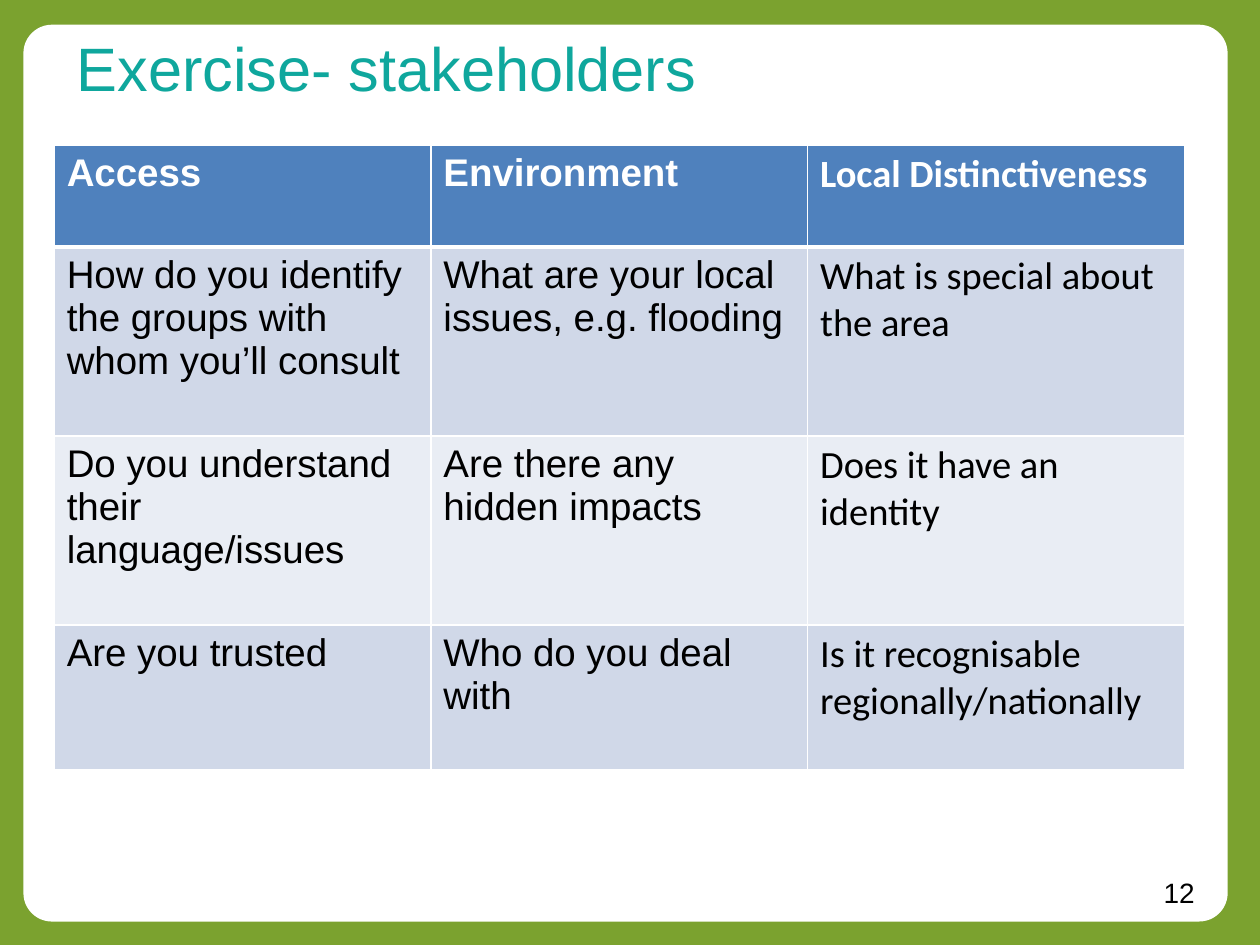
"""Build the stakeholder exercise slide: a framed panel, a title and a question table."""
from lxml import etree
from pptx import Presentation, util as u
from pptx.dml.color import RGBColor
from pptx.enum import shapes, text
from pptx.oxml.ns import qn

TITLE = "Exercise- stakeholders"
NUMBER = "12"
ROWS = [
    ("Access", "Environment", "Local Distinctiveness"),
    ("How do you identify the groups with whom you’ll consult",
     "What are your local issues, e.g. flooding", "What is special about the area"),
    ("Do you understand their language/issues",
     "Are there any hidden impacts", "Does it have an identity"),
    ("Are you trusted", "Who do you deal with", "Is it recognisable regionally/nationally"),
]
COLORS = {"frame": "7BA22F", "white": "FFFFFF", "title": "0FA79D", "black": "000000",
          "head": "4F81BD", "odd": "D0D8E8", "even": "E9EDF4"}
COLUMN_FONTS = ("Arial", "Arial", "Calibri")
ROW_HEIGHTS = (0.81, 1.5, 1.5, 1.15)
COLUMN_WIDTH = 2.99
PANEL = (0.2, 0.21, 9.53, 7.09)
TITLE_BOX = (0.51, 0.13, 6.8, 1.01)
NUMBER_BOX = (7.3, 6.9, 2.28, 0.37)
TABLE_CORNER = (0.43, 1.15)


def rgb(name):
    return RGBColor.from_string(COLORS[name])


def inches(values):
    return [u.Inches(v) for v in values]


def write(tf, content, color, **formats):
    p = tf.paragraphs[0]
    r = p.add_run()
    r.text = content
    r.font.color.rgb = rgb(color)
    for key, value in formats.items():
        setattr(r.font, key, value)
    return p


def add_text(s, box, content, color, size, margin_top, anchor, align):
    tf = s.shapes.add_textbox(*inches(box)).text_frame
    formats = {"word_wrap": True, "margin_top": u.Inches(margin_top), "vertical_anchor": anchor}
    for key, value in formats.items():
        setattr(tf, key, value)
    write(tf, content, color, name="Arial", size=u.Pt(size)).alignment = align


def set_borders(cell, widths):
    tc_pr = cell._tc.get_or_add_tcPr()
    for i, (side, width) in enumerate(widths.items()):
        ln = etree.Element(qn(f"a:ln{side}"), w=str(u.Pt(width)))
        fill = etree.SubElement(ln, qn("a:solidFill"))
        etree.SubElement(fill, qn("a:srgbClr"), val=COLORS["white"])
        tc_pr.insert(i, ln)


def add_questions(s):
    size = (COLUMN_WIDTH * len(COLUMN_FONTS), sum(ROW_HEIGHTS))
    table = s.shapes.add_table(len(ROWS), len(COLUMN_FONTS), *inches(TABLE_CORNER + size)).table
    for column in table.columns:
        column.width = u.Inches(COLUMN_WIDTH)
    for i, (row, height) in enumerate(zip(ROWS, ROW_HEIGHTS)):
        table.rows[i].height = u.Inches(height)
        head = i == 0
        fill = "head" if head else ("even", "odd")[i % 2]
        for j, (content, font) in enumerate(zip(row, COLUMN_FONTS)):
            cell = table.cell(i, j)
            cell.fill.solid()
            cell.fill.fore_color.rgb = rgb(fill)
            set_borders(cell, {"L": 1, "R": 1, "T": 3 if i == 1 else 1, "B": 3 if head else 1})
            write(cell.text_frame, content, "white" if head else "black",
                  name=font, size=u.Pt(22), bold=head)


def main():
    prs = Presentation()
    prs.slide_width, prs.slide_height = inches((10, 7.5))
    s = prs.slides.add_slide(prs.slide_layouts[6])
    s.background.fill.solid()
    s.background.fill.fore_color.rgb = rgb("frame")

    sp = s.shapes.add_shape(shapes.MSO_SHAPE.ROUNDED_RECTANGLE, *inches(PANEL))
    sp.adjustments[0] = 0.03
    sp.shadow.inherit = False
    sp.fill.solid()
    sp.fill.fore_color.rgb = sp.line.color.rgb = rgb("white")
    sp.line.width = u.Pt(2)

    add_text(s, NUMBER_BOX, NUMBER, "black", 16, 0.05,
             text.MSO_ANCHOR.MIDDLE, text.PP_ALIGN.RIGHT)
    add_text(s, TITLE_BOX, TITLE, "title", 35, 0.11,
             text.MSO_ANCHOR.TOP, text.PP_ALIGN.LEFT)
    add_questions(s)
    prs.save("out.pptx")


if __name__ == "__main__":
    main()
